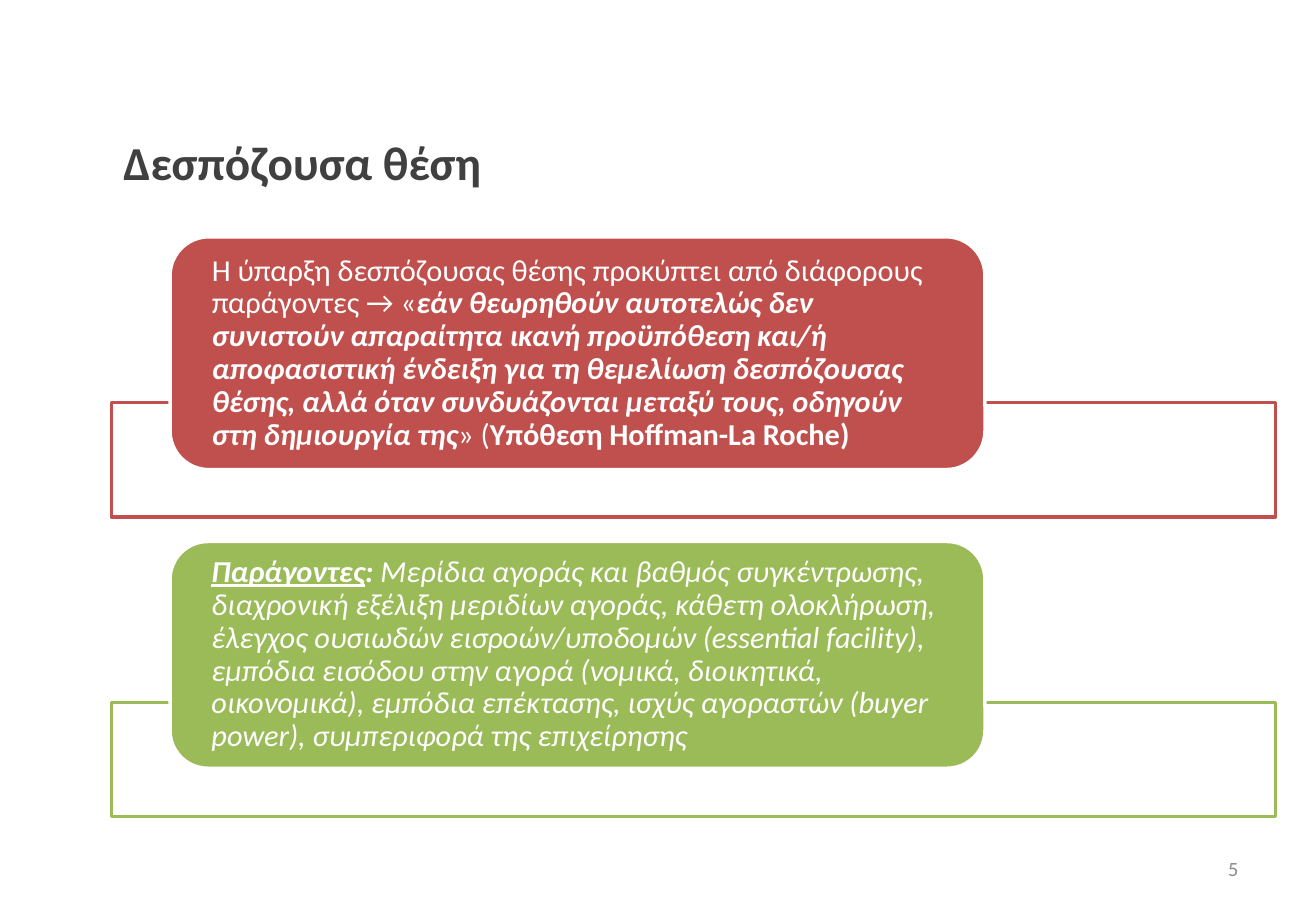
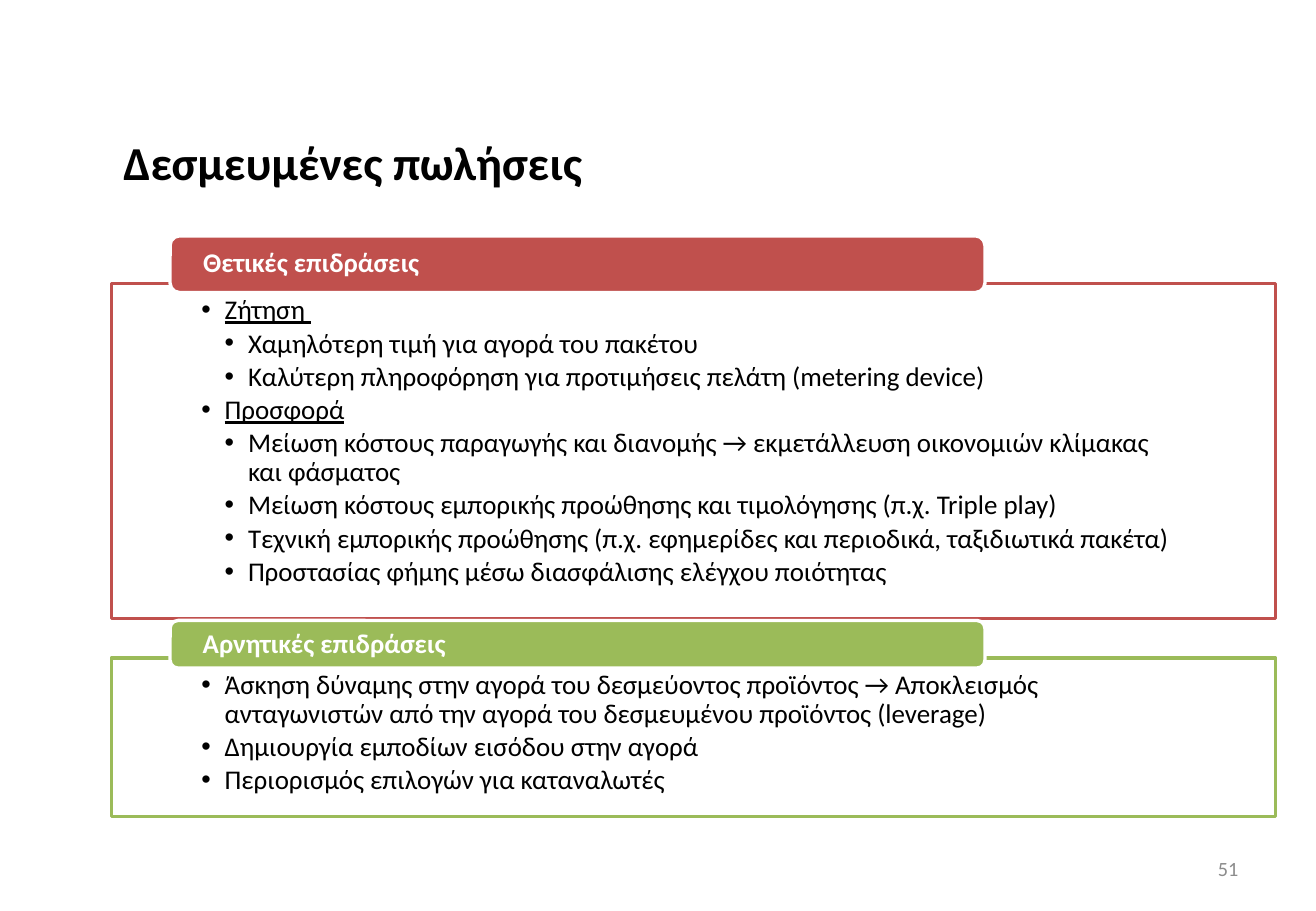
from dataclasses import dataclass, field
from typing import Any

from lxml import etree
from pptx import Presentation
from pptx import util as u
from pptx.dml import color as colors
from pptx.enum import shapes, text
from pptx.oxml import ns

PIXEL = 7620
PAGE_WIDTH, PAGE_HEIGHT = 1300, 900
FRAME_LEFT, FRAME_WIDTH = 110, 1150
CARD_LEFT, CARD_WIDTH = 168, 805
BULLET_INDENT = 23
FONT = "Calibri"
RED, GREEN, WHITE, BLACK, DARK, GREY = "C0504D", "9BBB59", "FFFFFF", "000000", "404040", "8C8C8C"
TWO_LISTS_LAYOUT, TITLE_ONLY_LAYOUT = 3, 5

MIDDLE = {"vertical_anchor": text.MSO_ANCHOR.MIDDLE}
CARD_INSETS = {"margin_left": 30, "margin_top": 0, "margin_right": 30, "margin_bottom": 0}
LIST_INSETS = {"margin_left": 89, "margin_top": 13, "margin_right": 89, "margin_bottom": 14}
TIGHT = {"line_spacing": 0.9, "space_before": u.Pt(0)}
LEFT = {"alignment": text.PP_ALIGN.LEFT}
BOLD = {"bold": True}
ITALIC = {"italic": True}
UNDERLINE = {"underline": True}


@dataclass
class Span:
    words: str
    style: dict[str, Any] = field(default_factory=dict)


@dataclass
class Item:
    span: Span
    level: int = 0


@dataclass
class Band:
    color: str
    card_top: int
    card_height: int
    frame_top: int
    frame_height: int
    size: int
    spans: list[Span]
    items: list[Item] = field(default_factory=list)


@dataclass
class Topic:
    title: str
    title_color: str
    number: str
    bands: list[Band]


def px(length: int) -> u.Emu:
    return u.Emu(length * PIXEL)


def rgb(value: str) -> colors.RGBColor:
    return colors.RGBColor.from_string(value)


def apply(target: Any, values: dict[str, Any]) -> None:
    for name, value in values.items():
        setattr(target, name, value)


def place(box: Any, left: int, top: int, width: int, height: int) -> None:
    lengths = {"left": left, "top": top, "width": width, "height": height}
    apply(box, {name: px(length) for name, length in lengths.items()})


def inset(box: Any, insets: dict[str, int]) -> None:
    apply(box.text_frame, {name: px(length) for name, length in insets.items()})


def paint(box: Any, fill: str, line: str) -> None:
    box.fill.solid()
    box.fill.fore_color.rgb = rgb(fill)
    box.line.color.rgb = rgb(line)
    box.line.width = u.Pt(2)


def write(para: Any, spans: list[Span], size: int, color: str, layout: dict[str, Any]) -> None:
    apply(para, layout)
    for span in spans:
        run = para.add_run()
        run.text = span.words
        apply(run.font, {"name": FONT, "size": u.Pt(size), **span.style})
        run.font.color.rgb = rgb(color)


def add_bullet(para: Any, level: int) -> None:
    properties = para._p.get_or_add_pPr()
    properties.set("marL", str(px(BULLET_INDENT * (level + 1))))
    properties.set("indent", str(px(-BULLET_INDENT)))
    etree.SubElement(properties, ns.qn("a:buChar")).set("char", "•")


def fill_list(box: Any, items: list[Item], size: int) -> None:
    frame = box.text_frame
    apply(frame, {"word_wrap": True, "auto_size": text.MSO_AUTO_SIZE.NONE,
                  "vertical_anchor": text.MSO_ANCHOR.TOP})
    inset(box, LIST_INSETS)
    for index, item in enumerate(items):
        para = frame.add_paragraph() if index else frame.paragraphs[0]
        add_bullet(para, item.level)
        write(para, [item.span], size, BLACK, {**TIGHT, **LEFT, "level": item.level, "space_after": u.Pt(2.4)})


def add_shape(page: Any, preset: Any, left: int, top: int, width: int, height: int) -> Any:
    box = page.shapes.add_shape(preset, px(left), px(top), px(width), px(height))
    box.shadow.inherit = False
    return box


def draw_band(page: Any, band: Band, index: int) -> None:
    area = (FRAME_LEFT, band.frame_top, FRAME_WIDTH, band.frame_height)
    if band.items:
        outline = page.placeholders[index]
        place(outline, *area)
        fill_list(outline, band.items, band.size)
    else:
        outline = add_shape(page, shapes.MSO_SHAPE.RECTANGLE, *area)
    paint(outline, WHITE, band.color)

    card = add_shape(page, shapes.MSO_SHAPE.ROUNDED_RECTANGLE,
                     CARD_LEFT, band.card_top, CARD_WIDTH, band.card_height)
    paint(card, band.color, WHITE)
    apply(card.text_frame, {**MIDDLE, "word_wrap": True})
    inset(card, CARD_INSETS)
    write(card.text_frame.paragraphs[0], band.spans, band.size, WHITE, {**TIGHT, **LEFT})


def draw_topic(deck: Any, topic: Topic) -> None:
    has_lists = any(band.items for band in topic.bands)
    layout = TWO_LISTS_LAYOUT if has_lists else TITLE_ONLY_LAYOUT
    page = deck.slides.add_slide(deck.slide_layouts[layout])

    title = page.shapes.title
    place(title, FRAME_LEFT, 102, FRAME_WIDTH, 115)
    apply(title.text_frame, {**MIDDLE, "word_wrap": True, "auto_size": text.MSO_AUTO_SIZE.NONE})
    write(title.text_frame.paragraphs[0], [Span(topic.title, BOLD)], 28, topic.title_color, LEFT)

    for index, band in enumerate(topic.bands, start=1):
        draw_band(page, band, index)

    number = page.shapes.add_textbox(px(931), px(834), px(304), px(48))
    apply(number.text_frame, {**MIDDLE, "word_wrap": True})
    write(number.text_frame.paragraphs[0], [Span(topic.number)], 12, GREY,
          {"alignment": text.PP_ALIGN.RIGHT})


TOPICS = [
    Topic("Δεσπόζουσα θέση", DARK, "5", [
        Band(RED, 234, 230, 398, 113, 18, [
            Span("Η ύπαρξη δεσπόζουσας θέσης προκύπτει από διάφορους παράγοντες → «"),
            Span("εάν θεωρηθούν αυτοτελώς δεν συνιστούν απαραίτητα ικανή προϋπόθεση και/ή "
                 "αποφασιστική ένδειξη για τη θεμελίωση δεσπόζουσας θέσης, αλλά όταν "
                 "συνδυάζονται μεταξύ τους, οδηγούν στη δημιουργία της", BOLD | ITALIC),
            Span("» ("),
            Span("Υπόθεση Hoffman-La Roche)", BOLD),
        ]),
        Band(GREEN, 535, 224, 694, 113, 18, [
            Span("Παράγοντες", BOLD | ITALIC | UNDERLINE),
            Span(": ", BOLD | ITALIC),
            Span("Μερίδια αγοράς και βαθμός συγκέντρωσης, διαχρονική εξέλιξη μεριδίων αγοράς, "
                 "κάθετη ολοκλήρωση, έλεγχος ουσιωδών εισροών/υποδομών (essential facility), "
                 "εμπόδια εισόδου στην αγορά (νομικά, διοικητικά, οικονομικά), εμπόδια "
                 "επέκτασης, ισχύς αγοραστών (buyer power), συμπεριφορά της επιχείρησης", ITALIC),
        ]),
    ]),
    Topic("Δεσμευμένες πωλήσεις", BLACK, "51", [
        Band(RED, 233, 56, 280, 331, 16, [Span("Θετικές επιδράσεις", BOLD)], [
            Item(Span("Ζήτηση ", UNDERLINE)),
            Item(Span("Χαμηλότερη τιμή για αγορά του πακέτου"), 1),
            Item(Span("Καλύτερη πληροφόρηση για προτιμήσεις πελάτη (metering device)"), 1),
            Item(Span("Προσφορά", UNDERLINE)),
            Item(Span("Μείωση κόστους παραγωγής και διανομής → εκμετάλλευση οικονομιών "
                      "κλίμακας και φάσματος"), 1),
            Item(Span("Μείωση κόστους εμπορικής προώθησης και τιμολόγησης (π.χ. Triple play)"), 1),
            Item(Span("Τεχνική εμπορικής προώθησης (π.χ. εφημερίδες και περιοδικά, "
                      "ταξιδιωτικά πακέτα)"), 1),
            Item(Span("Προστασίας φήμης μέσω διασφάλισης ελέγχου ποιότητας"), 1),
        ]),
        Band(GREEN, 613, 47, 650, 157, 16, [Span("Αρνητικές επιδράσεις", BOLD)], [
            Item(Span("Άσκηση δύναμης στην αγορά του δεσμεύοντος προϊόντος → Αποκλεισμός "
                      "ανταγωνιστών από την αγορά του δεσμευμένου προϊόντος (leverage)")),
            Item(Span("Δημιουργία εμποδίων εισόδου στην αγορά")),
            Item(Span("Περιορισμός επιλογών για καταναλωτές")),
        ]),
    ]),
]


def main() -> None:
    deck = Presentation()
    apply(deck, {"slide_width": px(PAGE_WIDTH), "slide_height": px(PAGE_HEIGHT)})
    for topic in TOPICS:
        draw_topic(deck, topic)
    deck.save("out.pptx")


if __name__ == "__main__":
    main()
